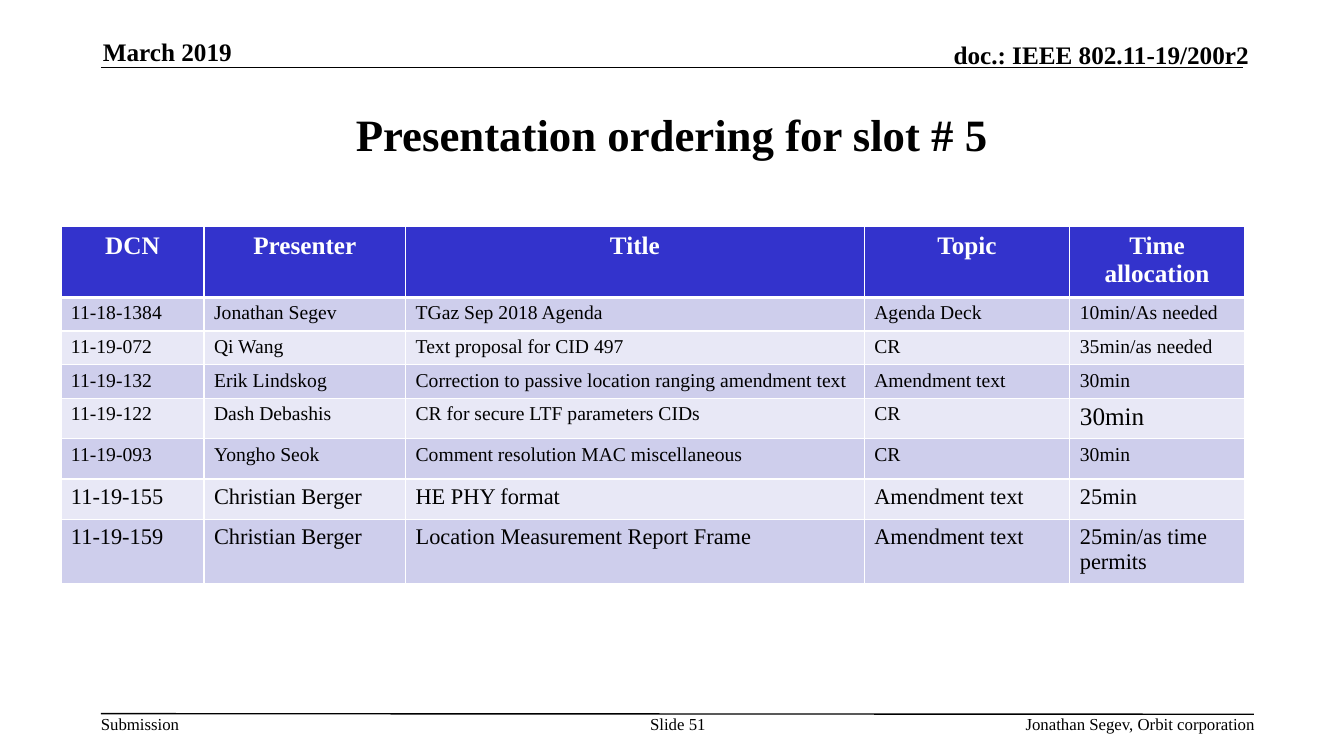
from dataclasses import dataclass

from lxml import etree
from pptx import Presentation
from pptx import util as u
from pptx.dml.color import RGBColor
from pptx.enum import shapes, text
from pptx.oxml.ns import qn
from pptx.slide import Slide
from pptx.table import _Cell

LEFT, CENTER, RIGHT = text.PP_ALIGN.LEFT, text.PP_ALIGN.CENTER, text.PP_ALIGN.RIGHT
TOP, MIDDLE, BOTTOM = text.MSO_ANCHOR.TOP, text.MSO_ANCHOR.MIDDLE, text.MSO_ANCHOR.BOTTOM


@dataclass(frozen=True)
class Theme:
    font: str = "Times New Roman"
    ink: str = "000000"
    paper: str = "FFFFFF"
    header_fill: str = "3333CC"
    band_fills: tuple[str, str] = ("CECEEC", "E8E8F6")
    title_size: float = 32
    heading_size: float = 18
    large_size: float = 16
    body_size: float = 14
    footer_size: float = 12
    line_width: float = 1
    header_rule_width: float = 3


THEME = Theme()


@dataclass(frozen=True)
class Label:
    words: str
    left: float
    top: float
    width: float
    height: float
    size: float
    align: text.PP_ALIGN = LEFT
    anchor: text.MSO_ANCHOR = TOP
    bold: bool = False
    inset: tuple[float, float] = (0, 0)
    wrap: bool = True


@dataclass(frozen=True)
class Rule:
    start: tuple[float, float]
    end: tuple[float, float]


@dataclass(frozen=True)
class Talk:
    dcn: str
    presenter: str
    title: str
    topic: str
    time: str
    height: float
    size: float = THEME.body_size
    time_size: float | None = None


RULES = [Rule((72, 48.24), (887.76, 48.24)), Rule((72, 509.76), (895.68, 510.2))]

LABELS = [
    Label("Submission", 72, 509.76, 56.88, 14.4, THEME.footer_size, wrap=False),
    Label("doc.: IEEE 802.11-19/200r2", 524.9, 28.08, 367.2, 21.6,
          THEME.heading_size, RIGHT, BOTTOM, bold=True),
    Label("Presentation ordering for slot # 5", 72, 54, 816, 83.52,
          THEME.title_size, CENTER, MIDDLE, bold=True, inset=(7.2, 3.6)),
    Label("Slide 51", 456.48, 509.76, 55.44, 28.8, THEME.footer_size, CENTER),
    Label("Jonathan Segev, Orbit corporation", 562.3, 509.76, 334.08, 14.4,
          THEME.footer_size, RIGHT),
    Label("March 2019", 73.44, 25.92, 196.56, 21.6,
          THEME.heading_size, LEFT, BOTTOM, bold=True),
]

TABLE_LEFT, TABLE_TOP = 43.5, 162
HEADER_HEIGHT = 24
COLUMNS = {"DCN": 102.2, "Presenter": 144, "Title": 327.6, "Topic": 146.9,
           "Time allocation": 124.5}

TALKS = [
    Talk("11-18-1384", "Jonathan Segev", "TGaz Sep 2018 Agenda", "Agenda Deck",
         "10min/As needed", 24),
    Talk("11-19-072", "Qi Wang", "Text proposal for CID 497", "CR",
         "35min/as needed", 23),
    Talk("11-19-132", "Erik Lindskog",
         "Correction to passive location ranging amendment text",
         "Amendment text", "30min", 23),
    Talk("11-19-122", "Dash Debashis", "CR for secure LTF parameters CIDs", "CR",
         "30min", 28.8, time_size=THEME.heading_size),
    Talk("11-19-093", "Yongho Seok", "Comment resolution MAC miscellaneous", "CR",
         "30min", 28.8),
    Talk("11-19-155", "Christian Berger", "HE PHY format", "Amendment text",
         "25min", 28.8, THEME.large_size),
    Talk("11-19-159", "Christian Berger", "Location Measurement Report Frame",
         "Amendment text", "25min/as time permits", 28.8, THEME.large_size),
]


def write(frame: text.MSO_ANCHOR, words: str, size: float, color: str,
          align: text.PP_ALIGN, bold: bool) -> None:
    """Put one styled run into the first paragraph of a text frame."""
    paragraph = frame.paragraphs[0]
    paragraph.alignment = align
    run = paragraph.add_run()
    run.text = words
    run.font.name = THEME.font
    run.font.size = u.Pt(size)
    run.font.bold = bold
    run.font.color.rgb = RGBColor.from_string(color)


def add_rule(slide: Slide, rule: Rule) -> None:
    connector = slide.shapes.add_connector(
        shapes.MSO_CONNECTOR.STRAIGHT, *map(u.Pt, rule.start + rule.end))
    connector.line.width = u.Pt(THEME.line_width)
    connector.line.color.rgb = RGBColor.from_string(THEME.ink)
    etree.SubElement(connector._element.spPr, qn("a:effectLst"))


def add_label(slide: Slide, label: Label) -> None:
    box = slide.shapes.add_textbox(
        *map(u.Pt, (label.left, label.top, label.width, label.height)))
    frame = box.text_frame
    frame.word_wrap = label.wrap
    frame.vertical_anchor = label.anchor
    frame.margin_left = frame.margin_right = u.Pt(label.inset[0])
    frame.margin_top = frame.margin_bottom = u.Pt(label.inset[1])
    write(frame, label.words, label.size, THEME.ink, label.align, label.bold)


def style_cell(cell: _Cell, fill: str, top: float, bottom: float) -> None:
    """Give a cell its borders, then its fill, in the order the schema asks for."""
    side = THEME.line_width
    properties = cell._tc.get_or_add_tcPr()
    for tag, width in (("lnL", side), ("lnR", side), ("lnT", top), ("lnB", bottom)):
        border = etree.SubElement(properties, qn(f"a:{tag}"), w=str(u.Pt(width)))
        paint = etree.SubElement(border, qn("a:solidFill"))
        etree.SubElement(paint, qn("a:srgbClr"), val=THEME.paper)
    cell.fill.solid()
    cell.fill.fore_color.rgb = RGBColor.from_string(fill)


def add_schedule(slide: Slide) -> None:
    heights = [HEADER_HEIGHT] + [talk.height for talk in TALKS]
    table = slide.shapes.add_table(
        len(heights), len(COLUMNS), u.Pt(TABLE_LEFT), u.Pt(TABLE_TOP),
        u.Pt(sum(COLUMNS.values())), u.Pt(sum(heights))).table
    for row, height in zip(table.rows, heights):
        row.height = u.Pt(height)
    thin, thick = THEME.line_width, THEME.header_rule_width

    for index, (heading, width) in enumerate(COLUMNS.items()):
        table.columns[index].width = u.Pt(width)
        cell = table.cell(0, index)
        style_cell(cell, THEME.header_fill, thin, thick)
        write(cell.text_frame, heading, THEME.heading_size, THEME.paper, CENTER, True)

    for number, talk in enumerate(TALKS):
        entries = [(words, talk.size) for words in
                   (talk.dcn, talk.presenter, talk.title, talk.topic)]
        entries.append((talk.time, talk.time_size or talk.size))
        for index, (words, size) in enumerate(entries):
            cell = table.cell(number + 1, index)
            style_cell(cell, THEME.band_fills[number % 2],
                       thick if number == 0 else thin, thin)
            write(cell.text_frame, words, size, THEME.ink, LEFT, False)


def main() -> None:
    presentation = Presentation()
    presentation.slide_width, presentation.slide_height = u.Pt(960), u.Pt(540)
    slide = presentation.slides.add_slide(presentation.slide_layouts[6])
    for rule in RULES:
        add_rule(slide, rule)
    for label in LABELS:
        add_label(slide, label)
    add_schedule(slide)
    presentation.save("out.pptx")


if __name__ == "__main__":
    main()
